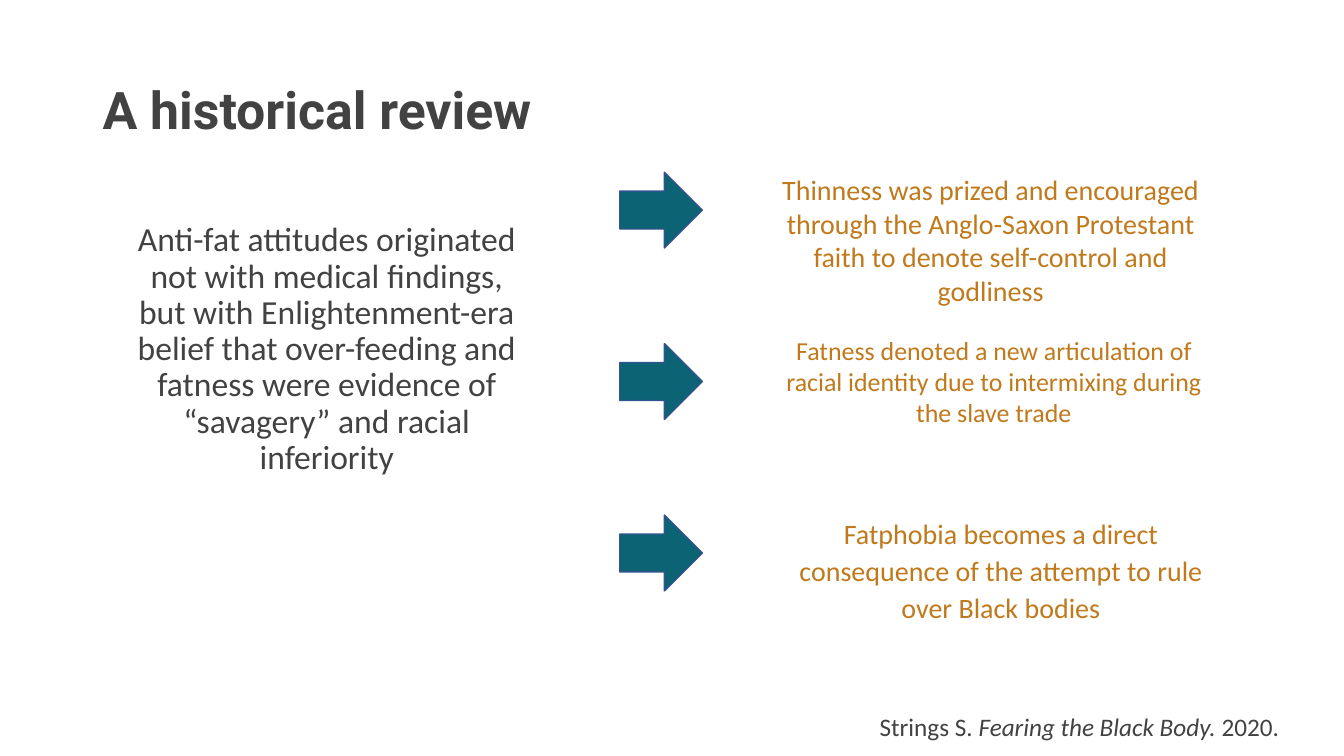
import pptx
import pptx.util
import pptx.dml.color
import pptx.enum.shapes
import pptx.enum.text

Cm = pptx.util.Cm
Pt = pptx.util.Pt
PP_ALIGN = pptx.enum.text.PP_ALIGN
COLORS = {"text": "424242", "accent": "C0791B", "arrow": "0B6374", "outline": "31538F"}


def rgb(name):
    return pptx.dml.color.RGBColor.from_string(COLORS[name])


def write(box, text, size, color, align, spacing=1.0, font="Calibri"):
    """Fill a text holder with one formatted paragraph and return it."""
    box.text_frame.word_wrap = True
    paragraph = box.text_frame.paragraphs[0]
    paragraph.text = text
    paragraph.alignment = align
    paragraph.line_spacing = spacing
    paragraph.font.size = Pt(size)
    paragraph.font.name = font
    paragraph.font.color.rgb = rgb(color)
    return paragraph


deck = pptx.Presentation()
deck.slide_width, deck.slide_height = Cm(33.87), Cm(19.05)
slide = deck.slides.add_slide(deck.slide_layouts[5])

# Title
title = slide.shapes.title
title.left, title.top, title.width, title.height = Cm(2.33), Cm(1.01), Cm(29.21), Cm(3.68)
title.text_frame.vertical_anchor = pptx.enum.text.MSO_ANCHOR.MIDDLE
heading = write(title, "A historical review", 37, "text", PP_ALIGN.LEFT, 0.9, "Roboto")
heading.font.bold = True

# Main claim on the left
claim = slide.shapes.add_textbox(Cm(2.95), Cm(5.49), Cm(10.57), Cm(9.98))
write(claim, "Anti-fat attitudes originated not with medical findings, but with "
      "Enlightenment-era belief that over-feeding and fatness were evidence of "
      "“savagery” and racial inferiority", 24, "text", PP_ALIGN.CENTER, 0.9)

# Evenly spaced arrows, each pointing to a consequence
# text, left, top, width, height, size, line spacing
consequences = [
    ("Thinness was prized and encouraged through the Anglo-Saxon Protestant faith "
     "to denote self-control and godliness", 19.25, 4.22, 11.43, 3.68, 20, 1.0),
    ("Fatness denoted a new articulation of racial identity due to intermixing "
     "during the slave trade", 19.43, 8.31, 11.23, 2.77, 18.5, 1.0),
    ("Fatphobia becomes a direct consequence of the attempt to rule over Black bodies",
     19.79, 12.8, 10.87, 2.77, 20, 1.1),
]
for row, (text, left, top, width, height, size, spacing) in enumerate(consequences):
    arrow = slide.shapes.add_shape(
        pptx.enum.shapes.MSO_SHAPE.RIGHT_ARROW,
        Cm(15.62), Cm(4.34 + 4.32 * row), Cm(2.08), Cm(1.91))
    arrow.shadow.inherit = False
    arrow.fill.solid()
    arrow.fill.fore_color.rgb = rgb("arrow")
    arrow.line.color.rgb = rgb("outline")
    arrow.line.width = Pt(1)

    consequence = slide.shapes.add_textbox(Cm(left), Cm(top), Cm(width), Cm(height))
    write(consequence, text, size, "accent", PP_ALIGN.CENTER, spacing)

# Citation
citation = slide.shapes.add_textbox(Cm(21.92), Cm(17.81), Cm(11.23), Cm(1.02))
reference = write(citation, "Strings S. ", 18, "text", PP_ALIGN.LEFT)
book = reference.add_run()
book.text = "Fearing the Black Body."
book.font.italic = True
reference.add_run().text = " 2020."

deck.save("out.pptx")
